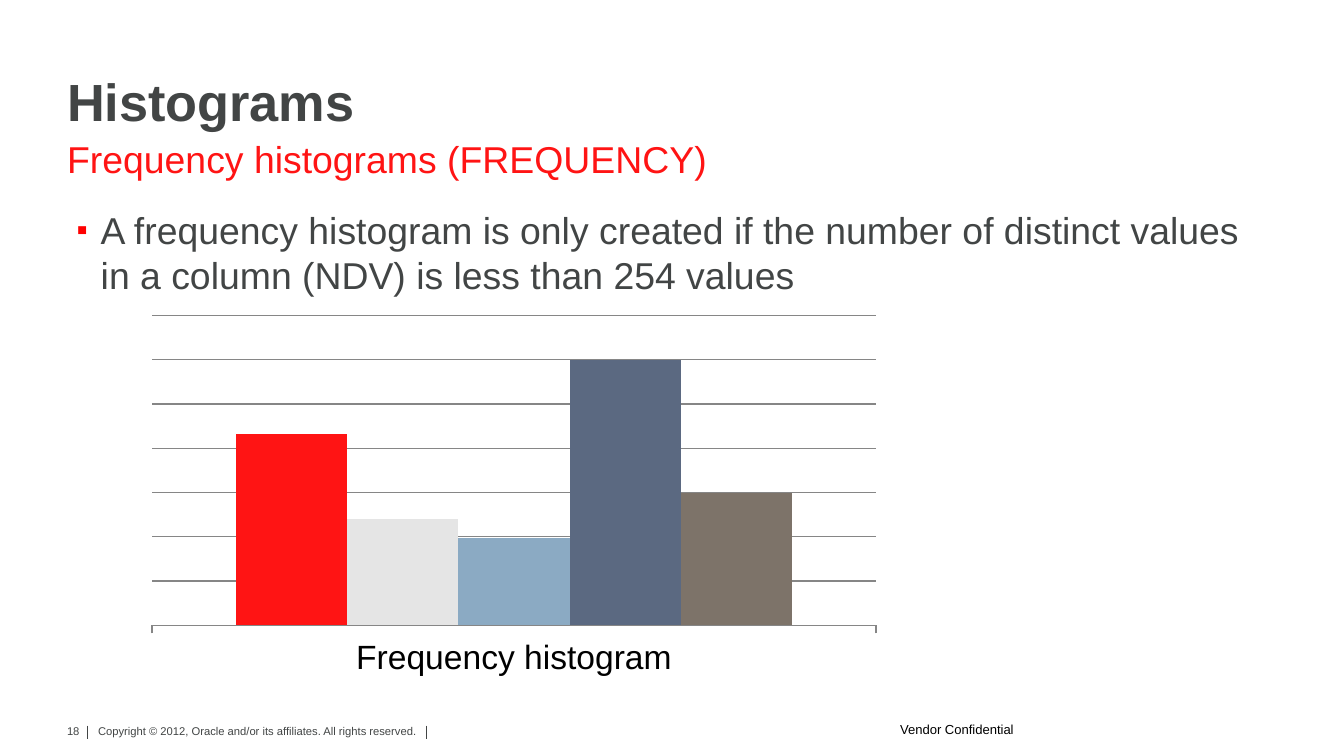
from dataclasses import dataclass

from lxml import etree
from pptx import Presentation
from pptx.chart.data import CategoryChartData
from pptx.dml.color import RGBColor
from pptx.enum.chart import XL_CHART_TYPE, XL_TICK_LABEL_POSITION, XL_TICK_MARK
from pptx.enum.shapes import MSO_CONNECTOR
from pptx.enum.text import MSO_ANCHOR, MSO_AUTO_SIZE, PP_ALIGN
from pptx.oxml.ns import qn
from pptx.util import Emu, Pt

PX = 9144  # EMU per px, 100 px to the inch
LEFT, RIGHT = PP_ALIGN.LEFT, PP_ALIGN.RIGHT
TOP, BOTTOM = MSO_ANCHOR.TOP, MSO_ANCHOR.BOTTOM
STRAIGHT = MSO_CONNECTOR.STRAIGHT
COLUMNS = XL_CHART_TYPE.COLUMN_CLUSTERED
TICK_OUT, TICK_NONE = XL_TICK_MARK.OUTSIDE, XL_TICK_MARK.NONE
LABELS_LOW = XL_TICK_LABEL_POSITION.LOW
GRID_STEP, AXIS_MAX = 16.67, 116.7


@dataclass(frozen=True)
class Theme:
    font: str = "Arial"
    ink: str = "424545"
    accent: str = "FF1414"
    bullet: str = "FF0000"
    black: str = "000000"
    grid: str = "868686"
    title: int = 28
    body: int = 20
    chart: int = 18
    note: int = 7
    footer: int = 6


@dataclass(frozen=True)
class Label:
    text: str
    box: tuple[int, int, int, int]
    size: int
    color: str
    inset: tuple[int, int] = (0, 0)
    align: PP_ALIGN = LEFT
    anchor: MSO_ANCHOR = TOP
    bold: bool = False
    wrap: bool = True


@dataclass(frozen=True)
class Bar:
    name: str
    value: int
    color: str


THEME = Theme()

TITLE = Label("Histograms", (50, 53, 900, 46), THEME.title, THEME.ink,
              anchor=BOTTOM, bold=True)
SUBTITLE = Label("Frequency histograms (FREQUENCY)", (50, 101, 900, 33),
                 THEME.body, THEME.accent)
BODY = Label("A frequency histogram is only created if the number of distinct "
             "values in a column (NDV) is less than 254 values",
             (50, 154, 900, 335), THEME.body, THEME.ink)
FOOTER = [
    Label("Copyright © 2012, Oracle and/or its affiliates. All rights reserved.",
          (69, 537, 274, 24), THEME.footer, THEME.ink, inset=(4, 2)),
    Label("18", (39, 534, 30, 20), THEME.footer, THEME.ink, inset=(10, 5),
          align=RIGHT, wrap=False),
    Label("Vendor Confidential", (660, 532, 317, 30), THEME.note, THEME.black,
          inset=(10, 5)),
]
DIVIDERS_X = (65, 317)
BARS = [
    Bar("Series 1", 72, "FF1414"),
    Bar("Series 2", 40, "E5E5E5"),
    Bar("Series 3", 33, "8BAAC3"),
    Bar("Series 4", 100, "5B6981"),
    Bar("Series 5", 50, "7D7369"),
]


def px(n: int) -> Emu:
    return Emu(n * PX)


def rgb(color: str) -> RGBColor:
    return RGBColor.from_string(color)


def style_font(font, size: int, color: str, bold: bool = False) -> None:
    font.name, font.size, font.bold = THEME.font, Pt(size), bold
    font.color.rgb = rgb(color)


def fill_label(sp, label: Label):
    """Place a text shape and write its single paragraph."""
    sp.left, sp.top, sp.width, sp.height = map(px, label.box)
    tf = sp.text_frame
    tf.auto_size = MSO_AUTO_SIZE.NONE
    tf.word_wrap = label.wrap
    tf.vertical_anchor = label.anchor
    tf.margin_left = tf.margin_right = px(label.inset[0])
    tf.margin_top = tf.margin_bottom = px(label.inset[1])
    tf.text = label.text
    p = tf.paragraphs[0]
    p.alignment = label.align
    style_font(p.runs[0].font, label.size, label.color, label.bold)
    return p


def add_label(slide, label: Label):
    return fill_label(slide.shapes.add_textbox(*map(px, label.box)), label)


def add_bullet(p) -> None:
    pPr = p._p.get_or_add_pPr()
    pPr.set("marL", str(px(25)))
    pPr.set("indent", str(px(-18)))
    clr = etree.SubElement(pPr, qn("a:buClr"))
    etree.SubElement(clr, qn("a:srgbClr"), val=THEME.bullet)
    etree.SubElement(pPr, qn("a:buSzPct"), val="85000")
    etree.SubElement(pPr, qn("a:buFont"), typeface=THEME.font)
    etree.SubElement(pPr, qn("a:buChar"), char="▪")


def add_divider(slide, x: int) -> None:
    line = slide.shapes.add_connector(STRAIGHT, px(x), px(540), px(x), px(550))
    line.line.color.rgb = rgb(THEME.ink)
    line.line.width = Pt(0.5)
    etree.SubElement(line._element.spPr, qn("a:effectLst"))


def add_histogram(slide, bars: list[Bar]) -> None:
    data = CategoryChartData()
    data.categories = ["Frequency histogram"]
    for bar in bars:
        data.add_series(bar.name, [bar.value])
    box = map(px, (102, 229, 561, 280))
    chart = slide.shapes.add_chart(COLUMNS, *box, data).chart
    chart.has_legend = chart.has_title = False
    style_font(chart.font, THEME.chart, THEME.black)

    plot = chart.plots[0]
    plot.gap_width, plot.overlap = 150, 0
    plot.vary_by_categories = False
    for series, bar in zip(plot.series, bars):
        series.format.fill.solid()
        series.format.fill.fore_color.rgb = rgb(bar.color)

    cat, val = chart.category_axis, chart.value_axis
    cat.major_tick_mark, cat.minor_tick_mark = TICK_OUT, TICK_NONE
    cat.tick_label_position = LABELS_LOW
    val.visible = False
    val.minimum_scale, val.maximum_scale = 0, AXIS_MAX
    val.major_unit = GRID_STEP
    val.has_major_gridlines = True
    for line in (cat.format.line, val.major_gridlines.format.line):
        line.color.rgb = rgb(THEME.grid)
        line.width = Pt(0.75)


def main() -> None:
    prs = Presentation()
    prs.slide_width = px(1000)
    prs.slide_height = Emu(prs.slide_width * 9 // 16)
    slide = prs.slides.add_slide(prs.slide_layouts[5])

    # Heading
    fill_label(slide.shapes.title, TITLE).line_spacing = 0.9
    add_label(slide, SUBTITLE)

    # Bullet text
    p = add_label(slide, BODY)
    p.space_after = Pt(6)
    add_bullet(p)

    # Chart
    add_histogram(slide, BARS)

    # Footer
    for label in FOOTER:
        add_label(slide, label)
    for x in DIVIDERS_X:
        add_divider(slide, x)

    prs.save("out.pptx")


if __name__ == "__main__":
    main()
